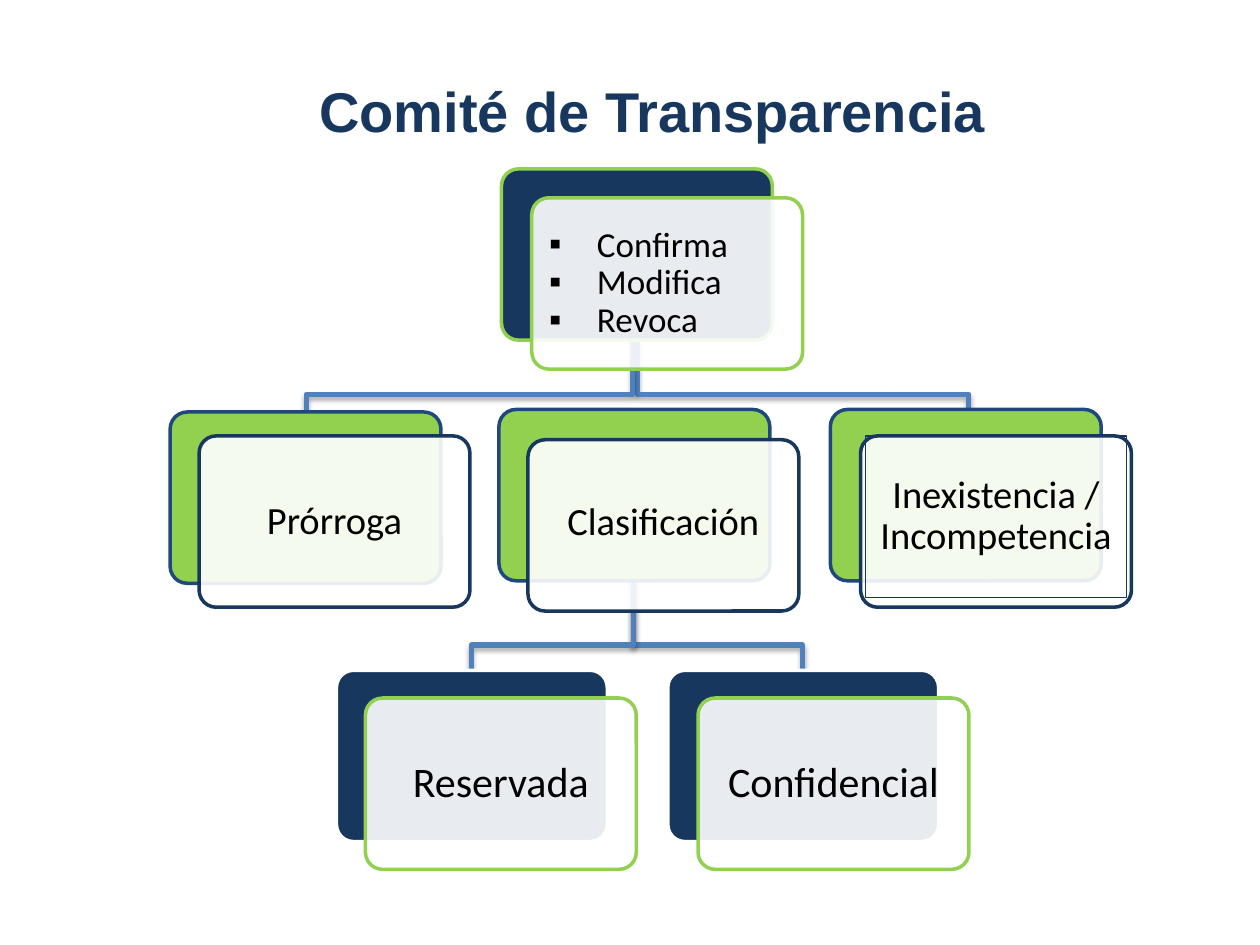
from dataclasses import dataclass

from lxml import etree
from pptx import Presentation
from pptx.dml.color import RGBColor
from pptx.enum import shapes, text
from pptx.oxml import ns
from pptx.util import Inches, Pt

NAVY = RGBColor(0x17, 0x37, 0x5E)
GREEN = RGBColor(0x92, 0xD0, 0x50)
EDGE_BLUE = RGBColor(0x1F, 0x49, 0x7D)
LINK_BLUE = RGBColor(0x4F, 0x81, 0xBD)
WHITE = RGBColor(0xFF, 0xFF, 0xFF)
BLACK = RGBColor(0, 0, 0)

CARD_W, CARD_H = 2.15, 1.36
LABEL_W, LABEL_H = 2.07, 1.28


@dataclass(frozen=True)
class Level:
    back_fill: RGBColor
    back_line: RGBColor
    front_line: RGBColor
    size: int


@dataclass(frozen=True)
class Card:
    lines: tuple[str, ...]
    level: Level
    back: tuple[float, float]
    front: tuple[float, float]
    label_drop: float = 0.04
    bulleted: bool = False
    framed: bool = False


@dataclass(frozen=True)
class Link:
    start: tuple[float, float]
    bend_y: float
    end: tuple[float, float]


ROOT = Level(NAVY, GREEN, GREEN, 20)
BRANCH = Level(GREEN, EDGE_BLUE, NAVY, 22)
LEAF = Level(NAVY, WHITE, GREEN, 24)

CARDS = [
    Card(("Confirma", "Modifica", "Revoca"), ROOT, (3.98, 1.34), (4.22, 1.57), bulleted=True),
    Card(("Prórroga",), BRANCH, (1.35, 3.27), (1.58, 3.46)),
    Card(("Clasificación",), BRANCH, (3.96, 3.25), (4.19, 3.49), label_drop=0.02),
    Card(("Reservada",), LEAF, (2.67, 5.32), (2.9, 5.54)),
    Card(("Confidencial",), LEAF, (5.3, 5.32), (5.54, 5.54)),
    Card(("Inexistencia / Incompetencia",), BRANCH, (6.59, 3.25), (6.83, 3.46),
         label_drop=0, framed=True),
]

LINKS = [
    Link((5.06, 2.7), 3.13, (7.69, 3.33)),
    Link((5.03, 4.61), 5.12, (6.37, 5.32)),
    Link((5.03, 4.61), 5.12, (3.74, 5.32)),
    Link((5.02, 2.7), 3.13, (2.43, 3.33)),
]


def add_child(parent, tag: str, **attributes):
    return etree.SubElement(parent, ns.qn(tag), attributes)


def add_bullet(paragraph, char: str, indent: float) -> None:
    properties = paragraph._p.get_or_add_pPr()
    properties.set("marL", str(Inches(indent)))
    properties.set("indent", str(-Inches(indent)))
    add_child(add_child(properties, "a:buClr"), "a:srgbClr", val=str(BLACK))
    add_child(properties, "a:buFont", typeface="Arial")
    add_child(properties, "a:buChar", char=char)


def write_text(shape, lines, *, font: str, size: int, color: RGBColor, bold=False,
               bulleted=False, spacing=None, inset_y=0.1) -> None:
    frame = shape.text_frame
    frame.word_wrap = True
    frame.vertical_anchor = text.MSO_ANCHOR.MIDDLE
    frame.margin_left = frame.margin_right = Inches(0.1)
    frame.margin_top = frame.margin_bottom = Inches(inset_y)
    for number, line in enumerate(lines):
        paragraph = frame.add_paragraph() if number else frame.paragraphs[0]
        paragraph.alignment = text.PP_ALIGN.LEFT if bulleted else text.PP_ALIGN.CENTER
        if spacing:
            paragraph.line_spacing = spacing
        if bulleted:
            add_bullet(paragraph, "▪", 0.38)
        run = paragraph.add_run()
        run.text = line
        run.font.name, run.font.size, run.font.bold = font, Pt(size), bold
        run.font.color.rgb = color


def draw_link(slide, link: Link) -> None:
    (x1, y1), (x2, y2) = link.start, link.end
    builder = slide.shapes.build_freeform(Inches(x1), Inches(y1))
    corners = [(x1, link.bend_y), (x2, link.bend_y), (x2, y2)]
    builder.add_line_segments([(Inches(x), Inches(y)) for x, y in corners], close=False)
    elbow = builder.convert_to_shape()
    elbow.fill.background()
    elbow.line.color.rgb = LINK_BLUE
    elbow.line.width = Pt(3)
    # Soft shadow straight below the line
    effects = add_child(elbow._element.spPr, "a:effectLst")
    shadow = add_child(effects, "a:outerShdw", blurRad=str(Pt(3.1)), dist=str(Pt(1.8)),
                       dir="5400000", rotWithShape="0")
    shade = add_child(shadow, "a:srgbClr", val=str(BLACK))
    add_child(shade, "a:alpha", val="35000")


def draw_panel(slide, corner: tuple[float, float], fill: RGBColor, line: RGBColor,
               opacity: int = 100) -> None:
    panel = slide.shapes.add_shape(
        shapes.MSO_SHAPE.ROUNDED_RECTANGLE,
        Inches(corner[0]), Inches(corner[1]), Inches(CARD_W), Inches(CARD_H))
    panel.adjustments[0] = 0.1
    panel.shadow.inherit = False
    panel.fill.solid()
    panel.fill.fore_color.rgb = fill
    panel.line.color.rgb = line
    panel.line.width = Pt(2)
    if opacity < 100:
        color = panel._element.spPr.find(ns.qn("a:solidFill"))[0]
        add_child(color, "a:alpha", val=str(opacity * 1000))


def draw_card(slide, card: Card) -> None:
    level = card.level
    draw_panel(slide, card.back, level.back_fill, level.back_line)
    draw_panel(slide, card.front, WHITE, level.front_line, opacity=90)
    label = slide.shapes.add_textbox(
        Inches(card.front[0] + 0.04), Inches(card.front[1] + card.label_drop),
        Inches(LABEL_W), Inches(LABEL_H))
    if card.framed:
        label.line.color.rgb = NAVY
        label.line.width = Pt(0.75)
    write_text(label, card.lines, font="Calibri", size=level.size, color=BLACK,
               bulleted=card.bulleted, spacing=0.9)


def main() -> None:
    deck = Presentation()
    deck.slide_width, deck.slide_height = Inches(10), Inches(7.5)
    slide = deck.slides.add_slide(deck.slide_layouts[6])

    # Hierarchy: links behind, cards in front
    for link in LINKS:
        draw_link(slide, link)
    for card in CARDS:
        draw_card(slide, card)

    # Title
    title = slide.shapes.add_textbox(Inches(2.02), Inches(0.25), Inches(6.32), Inches(1.25))
    write_text(title, ["Comité de Transparencia"], font="Arial", size=32, color=NAVY,
               bold=True, inset_y=0.05)

    deck.save("out.pptx")


if __name__ == "__main__":
    main()
